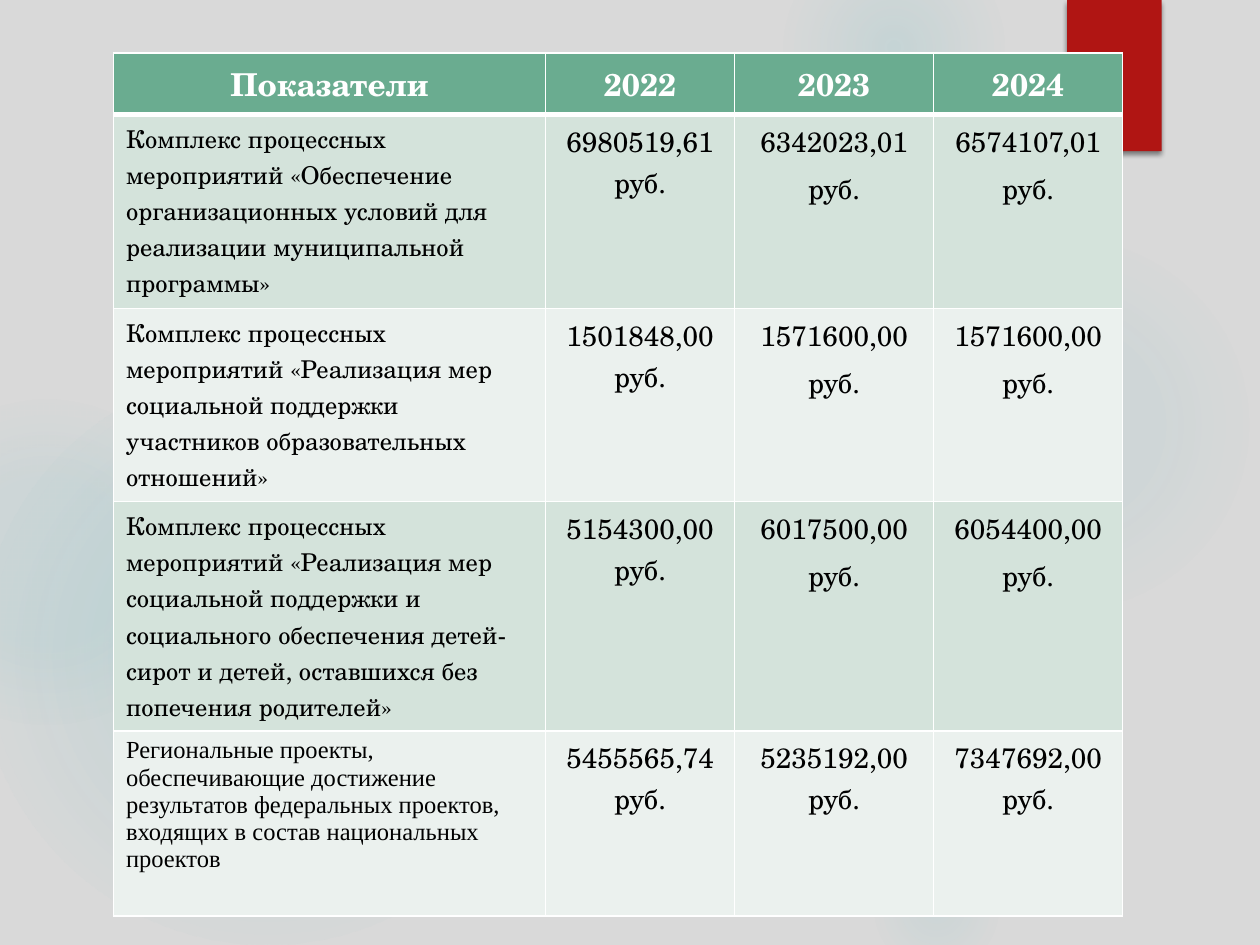
from dataclasses import dataclass

from pptx import Presentation
from pptx.dml.color import RGBColor
from pptx.enum.shapes import MSO_SHAPE
from pptx.enum.text import PP_ALIGN
from pptx.oxml import parse_xml
from pptx.oxml.ns import nsdecls
from pptx.util import Inches, Pt


@dataclass(frozen=True)
class Theme:
    background: str = "D9D9D9"
    glow: str = "50B9C1"
    ribbon: str = "B01513"
    header: str = "6AAC90"
    bands: tuple = ("D4E3DB", "EBF1EE")
    white: str = "FFFFFF"
    black: str = "000000"
    font: str = "TeX Gyre Schola"
    space_font: str = "League Spartan"
    project_font: str = "Times New Roman"
    header_size: int = 18
    label_size: int = 14
    value_size: int = 16


theme = Theme()


def style_font(font, name, size, color, bold=False):
    font.name, font.size, font.bold = name, Pt(size), bold
    font.color.rgb = RGBColor.from_string(color)


def style_cell(cell, fill, bottom_width=1):
    cell.fill.solid()
    cell.fill.fore_color.rgb = RGBColor.from_string(fill)
    properties = cell._tc.get_or_add_tcPr()
    for index, side in enumerate("LRTB"):
        width = Pt(bottom_width if side == "B" else 1)
        properties.insert(index, parse_xml(
            f'<a:ln{side} {nsdecls("a")} w="{width}"><a:solidFill>'
            f'<a:srgbClr val="{theme.white}"/></a:solidFill></a:ln{side}>'))


presentation = Presentation()
presentation.slide_width, presentation.slide_height = Inches(10), Inches(7.5)
slide = presentation.slides.add_slide(presentation.slide_layouts[6])
slide.background.fill.solid()
slide.background.fill.fore_color.rgb = RGBColor.from_string(theme.background)

# Soft glows: left, top, diameter, gradient stops (position %, opacity %)
glows = [
    (6.89, 1.83, 3.08, [(0, 7), (36, 6), (69, 0)]),
    (6.22, -0.5, 1.75, [(0, 14), (36, 7), (73, 0)]),
    (6.89, 6.67, 1.08, [(0, 9), (36, 5), (66, 0)]),
    (-0.17, 2.92, 4.58, [(0, 11), (36, 10), (75, 0)]),
    (-0.92, 3.17, 2.58, [(0, 8), (36, 8), (72, 0)]),
]
for left, top, diameter, stops in glows:
    shape = slide.shapes.add_shape(MSO_SHAPE.OVAL, Inches(left), Inches(top),
                                   Inches(diameter), Inches(diameter))
    shape.shadow.inherit = False
    shape.line.fill.background()
    stop_xml = "".join(
        f'<a:gs pos="{position * 1000}"><a:srgbClr val="{theme.glow}">'
        f'<a:alpha val="{opacity * 1000}"/></a:srgbClr></a:gs>'
        for position, opacity in stops)
    shape.fill.background()
    properties = shape._element.spPr
    properties.replace(properties.find("{*}noFill"), parse_xml(
        f'<a:gradFill {nsdecls("a")}><a:gsLst>{stop_xml}</a:gsLst>'
        '<a:path path="circle"><a:fillToRect l="50000" t="50000" r="50000" b="50000"/>'
        '</a:path></a:gradFill>'))

# Red ribbon with a soft shadow
ribbon = slide.shapes.add_shape(MSO_SHAPE.RECTANGLE, Inches(8.47), 0, Inches(0.75), Inches(1.2))
ribbon.fill.solid()
ribbon.fill.fore_color.rgb = RGBColor.from_string(theme.ribbon)
ribbon.line.fill.background()
ribbon.shadow.inherit = False
ribbon._element.spPr.find("{*}effectLst").append(parse_xml(
    f'<a:outerShdw {nsdecls("a")} blurRad="{Pt(3)}" dist="{Pt(2)}" dir="5400000" '
    f'rotWithShape="0"><a:srgbClr val="{theme.black}"><a:alpha val="45000"/>'
    '</a:srgbClr></a:outerShdw>'))

# Table of indicators
headings = ["Показатели", "2022", "2023", "2024"]
indicators = [
    ("Комплекс процессных мероприятий «Обеспечение организационных условий "
     "для реализации муниципальной программы»",
     "6980519,61", "6342023,01", "6574107,01"),
    ("Комплекс процессных мероприятий «Реализация мер социальной поддержки "
     "участников образовательных отношений»",
     "1501848,00", "1571600,00", "1571600,00"),
    ("Комплекс процессных мероприятий «Реализация мер социальной поддержки и "
     "социального обеспечения детей-сирот и детей, оставшихся без попечения родителей»",
     "5154300,00", "6017500,00", "6054400,00"),
    ("Региональные проекты, обеспечивающие достижение результатов федеральных "
     "проектов, входящих в состав национальных проектов",
     "5455565,74", "5235192,00", "7347692,00"),
]
column_widths = [3.43, 1.5, 1.58, 1.5]
row_heights = [0.48, 1.54, 1.53, 1.82, 1.47]
table = slide.shapes.add_table(
    len(row_heights), len(column_widths), Inches(0.9), Inches(0.42),
    Inches(sum(column_widths)), Inches(sum(row_heights))).table
for column, width in zip(table.columns, column_widths):
    column.width = Inches(width)
for row, height in zip(table.rows, row_heights):
    row.height = Inches(height)

# Header row
for cell, heading in zip(table.rows[0].cells, headings):
    style_cell(cell, theme.header, bottom_width=3)
    paragraph = cell.text_frame.paragraphs[0]
    paragraph.text = heading
    paragraph.alignment = PP_ALIGN.CENTER
    style_font(paragraph.font, theme.font, theme.header_size, theme.white, bold=True)

# Indicator rows: label, then one amount per year
for row_index, (label, *amounts) in enumerate(indicators):
    cells = table.rows[row_index + 1].cells
    last_row = row_index == len(indicators) - 1
    for cell in cells:
        style_cell(cell, theme.bands[row_index % 2])
    paragraph = cells[0].text_frame.paragraphs[0]
    paragraph.text = label
    style_font(paragraph.font, theme.project_font if last_row else theme.font,
               theme.label_size, theme.black)

    for year_index, amount in enumerate(amounts):
        cell = cells[year_index + 1]
        paragraph = cell.text_frame.paragraphs[0]
        paragraph.alignment = PP_ALIGN.CENTER
        style_font(paragraph.font, theme.font, theme.value_size, theme.black)
        if last_row or year_index > 0:
            paragraph.text = f"{amount} руб."
        else:
            for text in (amount, " ", "руб."):
                run = paragraph.add_run()
                run.text = text
                if text == " ":
                    style_font(run.font, theme.space_font, theme.header_size, theme.black)
        if year_index > 0 and not last_row:
            paragraph.line_spacing = 1.15
            cell.margin_left = cell.margin_right = cell.margin_top = cell.margin_bottom = 0

presentation.save("out.pptx")
